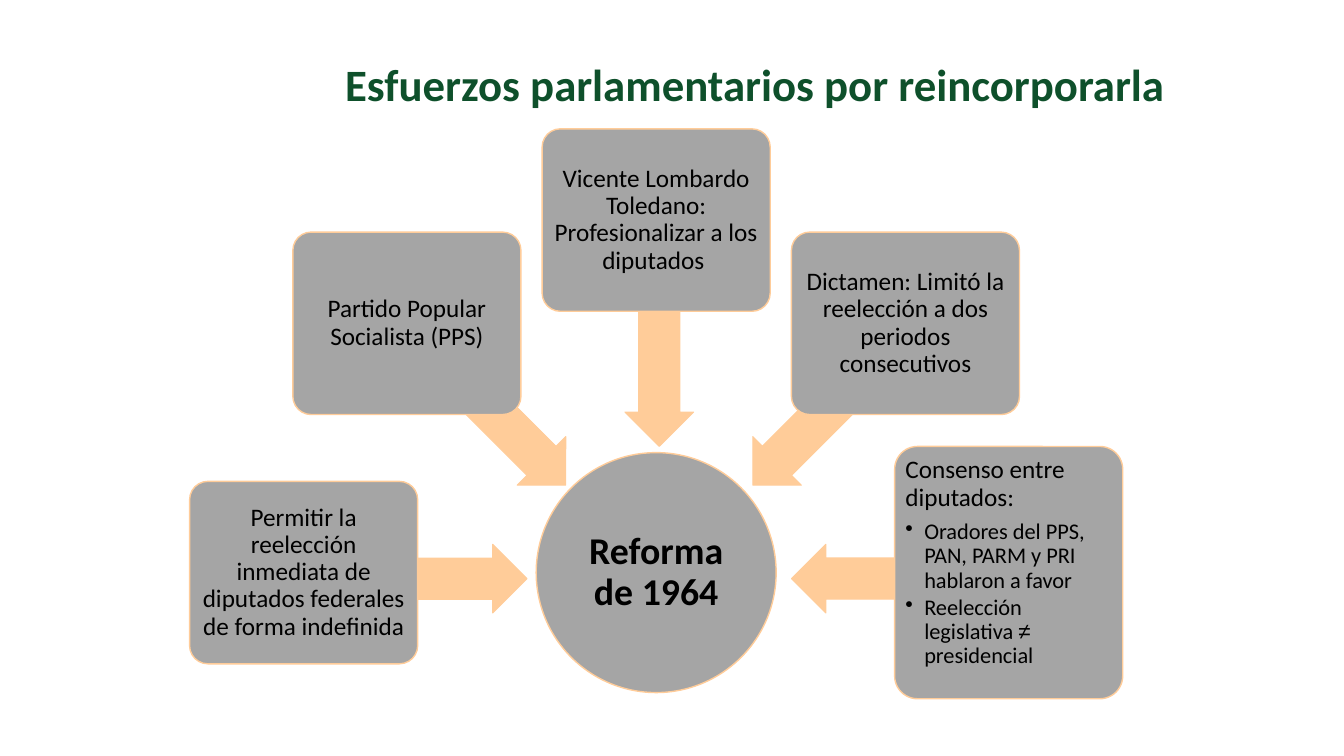
import math

import lxml.etree
import pptx
import pptx.dml.color
import pptx.enum.shapes
import pptx.enum.text
import pptx.oxml.ns
import pptx.util

Pt = pptx.util.Pt
SHAPES = pptx.enum.shapes.MSO_SHAPE
ALIGN = pptx.enum.text.PP_ALIGN
ANCHOR = pptx.enum.text.MSO_ANCHOR

COLORS = {"title": "0E502B", "box": "A5A5A5", "accent": "FFCC99", "text": "000000"}
FONT = "Calibri"

CENTER = (468.7, 409)
CIRCLE_SIZE = 171.4
BOX_RADIUS = 251.8
BOX_WIDTH = 162.9
BOX_HEIGHT = 130.3
CONSENSUS_HEIGHT = 180.2
ARROW_CENTER = (470.9, 413.3)
ARROW_RADIUS = 173
ARROW_SIZE = (157, 49)
BULLET_INDENT = 13.5

# Clockwise from the left, one every 45 degrees
IDEAS = [
    "Permitir la reelección inmediata de diputados federales de forma indefinida",
    "Partido Popular Socialista (PPS)",
    "Vicente Lombardo Toledano: Profesionalizar a los diputados ",
    "Dictamen: Limitó la reelección a dos periodos consecutivos",
]
CONSENSUS = "Consenso entre diputados:"
CONSENSUS_POINTS = [
    [("Oradores del PPS, PAN, PARM y PRI hablaron a favor", FONT)],
    [("Reelección legislativa ", FONT), ("≠ ", "Arial"), ("presidencial", FONT)],
]


def color(name):
    return pptx.dml.color.RGBColor.from_string(COLORS[name])


def add_span(para, text, size, bold=False, font=FONT, color_name="text"):
    span = para.add_run()
    span.text = text
    span.font.name = font
    span.font.size = Pt(size)
    span.font.bold = bold
    span.font.color.rgb = color(color_name)


def set_insets(frame, inset):
    frame.margin_left = frame.margin_right = Pt(inset)
    frame.margin_top = frame.margin_bottom = Pt(inset)
    frame.word_wrap = True


def format_para(para, align, space_after):
    para.alignment = align
    para.line_spacing = 0.9
    para.space_before = Pt(0)
    para.space_after = Pt(space_after)


def add_bullet(para):
    properties = para._p.get_or_add_pPr()
    properties.set("marL", str(Pt(BULLET_INDENT)))
    properties.set("indent", str(-Pt(BULLET_INDENT)))
    bullet = lxml.etree.SubElement(properties, pptx.oxml.ns.qn("a:buChar"))
    bullet.set("char", "•")


def on_circle(center, radius, angle):
    turn = math.radians(angle)
    return center[0] + radius * math.cos(turn), center[1] + radius * math.sin(turn)


def add_centered(page, kind, center, width, height, fill, line_width):
    shape = page.shapes.add_shape(
        kind, Pt(center[0] - width / 2), Pt(center[1] - height / 2), Pt(width), Pt(height))
    shape.shadow.inherit = False
    shape.fill.solid()
    shape.fill.fore_color.rgb = color(fill)
    shape.line.color.rgb = color("accent")
    shape.line.width = Pt(line_width)
    return shape


def add_title(page, left, top, width, height):
    title = page.shapes.title
    title.left, title.top, title.width, title.height = Pt(left), Pt(top), Pt(width), Pt(height)
    frame = title.text_frame
    set_insets(frame, 7.2)
    frame.auto_size = pptx.enum.text.MSO_AUTO_SIZE.NONE
    frame.vertical_anchor = ANCHOR.TOP
    para = frame.paragraphs[0]
    format_para(para, ALIGN.RIGHT, 0)
    add_span(para, "Esfuerzos parlamentarios por reincorporarla", 32, True, color_name="title")


def add_hub(page, center, size):
    hub = add_centered(page, SHAPES.OVAL, center, size, size, "box", 1)
    frame = hub.text_frame
    set_insets(frame, 1.4)
    frame.vertical_anchor = ANCHOR.MIDDLE
    para = frame.paragraphs[0]
    format_para(para, ALIGN.CENTER, 0)
    add_span(para, "Reforma de 1964", 27, True)


def add_arrow(page, angle):
    center = on_circle(ARROW_CENTER, ARROW_RADIUS, angle)
    arrow = add_centered(page, SHAPES.LEFT_ARROW, center, *ARROW_SIZE, "accent", 0.75)
    arrow.adjustments[0] = 0.6
    arrow.adjustments[1] = 0.5
    arrow.rotation = angle % 360


def add_box(page, angle, height, text, align, anchor):
    center = on_circle(CENTER, BOX_RADIUS, angle)
    box = add_centered(page, SHAPES.ROUNDED_RECTANGLE, center, BOX_WIDTH, height, "box", 1)
    box.adjustments[0] = 0.1
    frame = box.text_frame
    set_insets(frame, 2.9)
    frame.vertical_anchor = anchor
    para = frame.paragraphs[0]
    format_para(para, align, 6.3 if align == ALIGN.LEFT else 0)
    add_span(para, text, 18)
    return frame


def add_consensus(page, angle):
    frame = add_box(page, angle, CONSENSUS_HEIGHT, CONSENSUS, ALIGN.LEFT, ANCHOR.TOP)
    for point in CONSENSUS_POINTS:
        para = frame.add_paragraph()
        para.level = 1
        format_para(para, ALIGN.LEFT, 2.4)
        add_bullet(para)
        for text, font in point:
            add_span(para, text, 16, font=font)


def main():
    deck = pptx.Presentation()
    deck.slide_width, deck.slide_height = Pt(960), Pt(540)
    page = deck.slides.add_slide(deck.slide_layouts[5])

    add_title(page, 144.7, 37.4, 694.8, 31.7)
    add_hub(page, CENTER, CIRCLE_SIZE)

    # Ideas around the hub, each box over the tail of its arrow
    for step, idea in enumerate(IDEAS):
        angle = 180 + 45 * step
        add_arrow(page, angle)
        add_box(page, angle, BOX_HEIGHT, idea, ALIGN.CENTER, ANCHOR.MIDDLE)
    add_arrow(page, 360)
    add_consensus(page, 360)

    deck.save("out.pptx")


if __name__ == "__main__":
    main()
